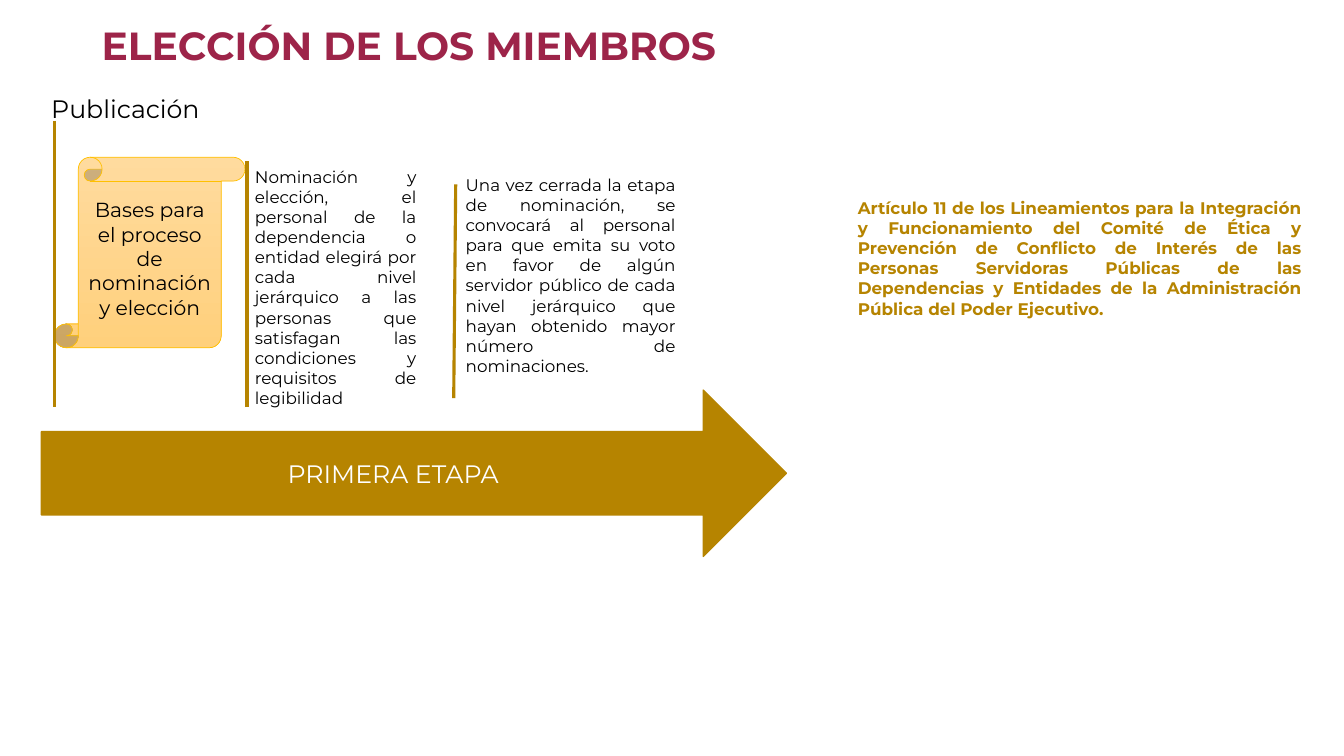
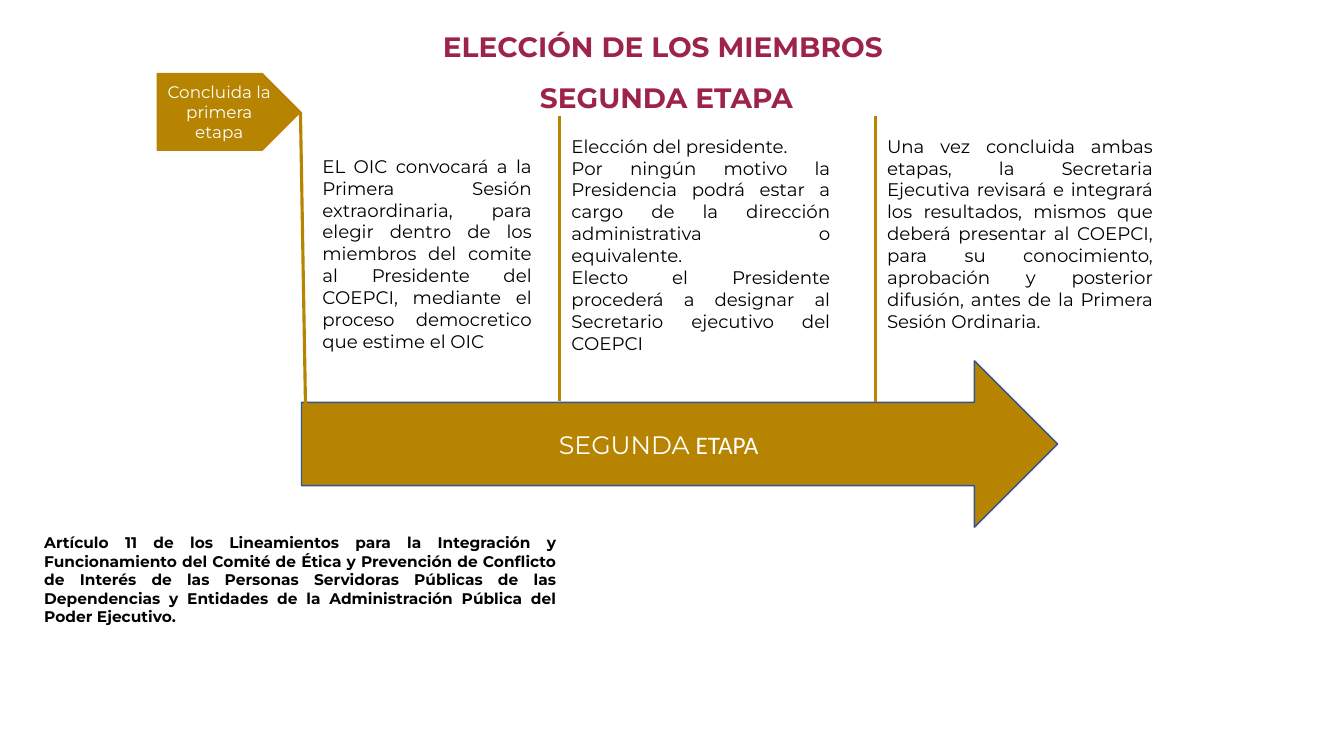
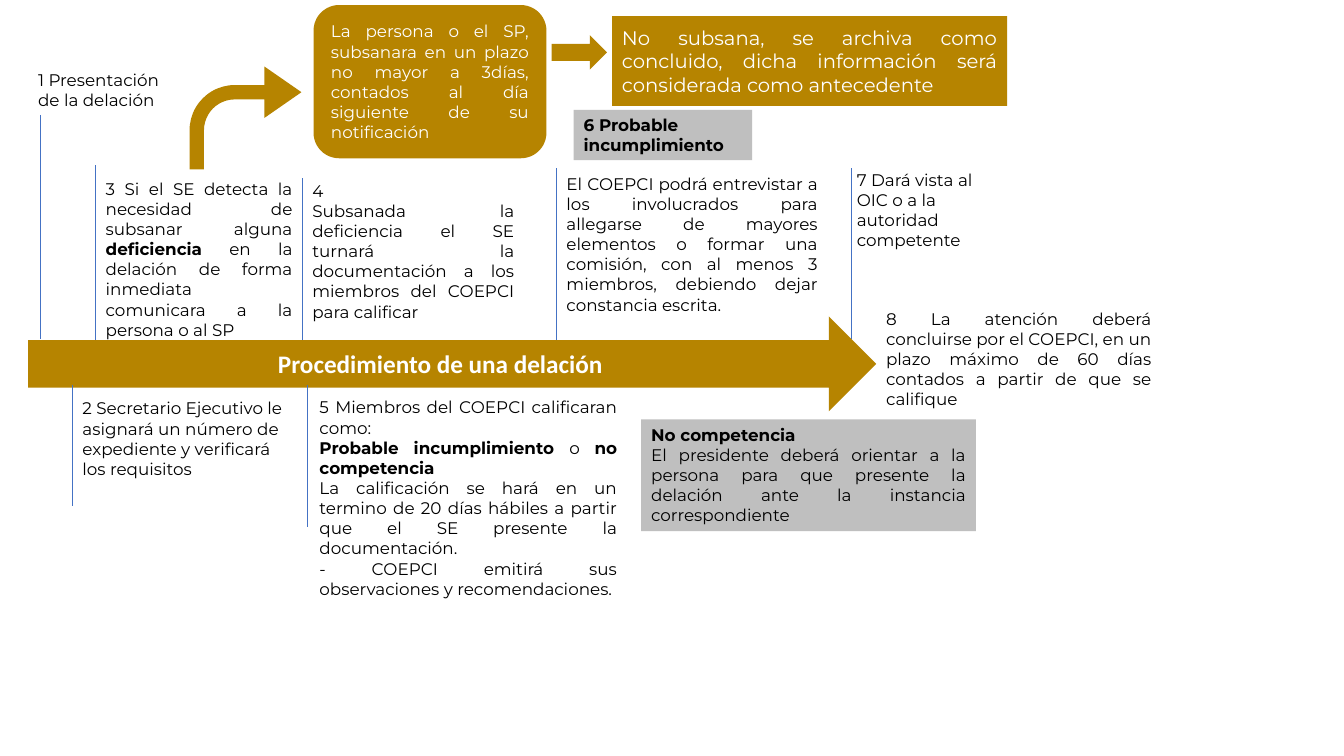
from dataclasses import dataclass

from pptx import Presentation
from pptx.dml.color import RGBColor
from pptx.enum.shapes import MSO_CONNECTOR as Line, MSO_SHAPE as Geo
from pptx.enum.text import MSO_ANCHOR as Anchor, MSO_AUTO_SIZE as Fit, PP_ALIGN as Al
from pptx.oxml.ns import qn
from pptx.util import Emu, Pt

PX = 9144  # 100 px to the inch
TITLE_ONLY, BLANK = 5, 6


@dataclass(frozen=True)
class Theme:
    font: str = "Montserrat"
    plain_font: str = "Calibri"
    wine: str = "9D2449"
    gold: str = "B68400"
    navy: str = "325491"
    blue: str = "4472C4"
    gray: str = "BFBFBF"
    amber: str = "FFC000"
    parchment: tuple = ("FFDB9E", "FFD07C")
    black: str = "000000"
    white: str = "FFFFFF"
    title: int = 28
    subtitle: int = 20
    banner: int = 18
    scroll: float = 14.5
    callout: int = 14
    large: int = 13
    body: int = 12
    note: int = 11


T = Theme()
rgb = RGBColor.from_string


class Deck:
    def __init__(self):
        self.prs = Presentation()
        self.prs.slide_width, self.prs.slide_height = Emu(1333 * PX), Emu(750 * PX)
        self.s = None

    def slide(self, layout):
        self.s = self.prs.slides.add_slide(self.prs.slide_layouts[layout])

    def fill_text(self, sp, text, size, color, align, bold=False, font=T.font,
                  anchor=Anchor.TOP, spacing=None):
        """One paragraph per line of text; ** switches bold on and off."""
        tf = sp.text_frame
        tf.word_wrap, tf.auto_size, tf.vertical_anchor = True, Fit.NONE, anchor
        for i, line in enumerate(text.split("\n")):
            p = tf.paragraphs[0] if i == 0 else tf.add_paragraph()
            p.alignment, p.line_spacing = align, spacing
            for j, part in enumerate(line.split("**")):
                if part:
                    r = p.add_run()
                    r.text = part
                    r.font.name, r.font.size = font, Pt(size)
                    r.font.bold = bold or j % 2 == 1
                    r.font.color.rgb = rgb(color)

    def heading(self, sp, text, size):
        self.fill_text(sp, text, size, T.wine, Al.CENTER, bold=True, spacing=0.9)

    def title(self, box, text, size):
        sp = self.s.shapes.title
        sp.left, sp.top, sp.width, sp.height = (Emu(v * PX) for v in box)
        self.heading(sp, text, size)

    def subtitle(self, box, text):
        self.heading(self.textbox(box), text, T.subtitle)

    def textbox(self, box):
        return self.s.shapes.add_textbox(*(Emu(v * PX) for v in box))

    def text(self, box, text, size=T.body, color=T.black, align=Al.JUSTIFY, bold=False):
        self.fill_text(self.textbox(box), text, size, color, align, bold)

    def shape(self, geo, box, text="", fill=T.gold, line=None, width=1, size=T.body,
              color=T.white, align=Al.CENTER, anchor=Anchor.MIDDLE, **style):
        sp = self.s.shapes.add_shape(geo, *(Emu(v * PX) for v in box))
        sp.shadow.inherit = False
        if isinstance(fill, tuple):
            sp.fill.gradient()
            sp.fill.gradient_angle = 270
            for stop, c in zip(sp.fill.gradient_stops, fill):
                stop.color.rgb = rgb(c)
        else:
            sp.fill.solid()
            sp.fill.fore_color.rgb = rgb(fill)
        if line:
            sp.line.color.rgb, sp.line.width = rgb(line), Pt(width)
        else:
            sp.line.fill.background()
        if text:
            self.fill_text(sp, text, size, color, align, anchor=anchor, **style)
        return sp

    def rule(self, x1, y1, x2, y2, color=T.gold, width=2.25):
        ln = self.s.shapes.add_connector(
            Line.STRAIGHT, *(Emu(v * PX) for v in (x1, y1, x2, y2)))
        ln.line.color.rgb, ln.line.width = rgb(color), Pt(width)
        sp_pr = ln._element.spPr
        sp_pr.append(sp_pr.makeelement(qn("a:effectLst"), {}))


HEADING = "ELECCIÓN DE LOS MIEMBROS"
ARTICLE = ("Artículo 11 de los Lineamientos para la Integración y Funcionamiento del Comité "
           "de Ética y Prevención de Conflicto de Interés de las Personas Servidoras Públicas "
           "de las Dependencias y Entidades de la Administración Pública del Poder Ejecutivo.")


def first_stage(d):
    d.slide(TITLE_ONLY)
    d.title((59, 21, 693, 54), HEADING, T.title)
    # Call and stage arrow
    d.shape(Geo.VERTICAL_SCROLL, (54, 156, 189, 189),
            "Bases para el proceso de nominación y elección", T.parchment, T.amber, 0.5,
            T.scroll, T.black)
    d.shape(Geo.RIGHT_ARROW, (41, 387, 739, 165), "PRIMERA ETAPA", line=T.gold, size=T.banner)
    # Steps
    for ends in ((54, 120, 54, 404), (245, 404, 245, 160), (452, 183, 450, 395)):
        d.rule(*ends)
    d.text((41, 88, 180, 40), "Publicación", T.banner, align=Al.LEFT)
    d.text((243, 160, 180, 252),
           "Nominación y elección, el personal de la dependencia o entidad elegirá por cada "
           "nivel jerárquico a las personas que satisfagan las condiciones y requisitos de "
           "legibilidad")
    d.text((452, 168, 228, 212),
           "Una vez cerrada la etapa de nominación, se convocará al personal para que emita su "
           "voto en favor de algún servidor público de cada nivel jerárquico que hayan obtenido "
           "mayor número de nominaciones.")
    # Legal basis
    d.text((841, 191, 460, 131), ARTICLE, color=T.gold, bold=True)


def second_stage(d):
    d.slide(TITLE_ONLY)
    d.title((384, 28, 547, 46), HEADING, T.subtitle)
    d.subtitle((515, 79, 292, 46), "SEGUNDA ETAPA")
    # Stage arrow, its last word in the plain font
    sp = d.shape(Geo.RIGHT_ARROW, (299, 358, 750, 165), "SEGUNDA** ETAPA",
                 line=T.navy, size=T.banner)
    r = sp.text_frame.paragraphs[0].runs[1]
    r.font.name, r.font.bold = T.plain_font, False
    # Steps
    for ends in ((298, 111, 303, 402), (555, 115, 555, 398), (868, 115, 868, 399)):
        d.rule(*ends)
    d.shape(Geo.PENTAGON, (156, 73, 142, 76), "Concluida la primera etapa", line=T.gold)
    d.text((310, 149, 227, 229),
           "EL OIC convocará a la Primera Sesión extraordinaria, para elegir dentro de los "
           "miembros del comite al Presidente del COEPCI, mediante el proceso democretico que "
           "estime el OIC", T.large)
    d.text((557, 129, 276, 251),
           "Elección del presidente.\n"
           "Por ningún motivo la Presidencia podrá estar a cargo de la dirección administrativa "
           "o equivalente.\n"
           "Electo el Presidente procederá a designar al Secretario ejecutivo del COEPCI", T.large)
    d.text((870, 129, 283, 251),
           "Una vez concluida ambas etapas, la Secretaria Ejecutiva revisará e integrará los "
           "resultados, mismos que deberá presentar al COEPCI, para su conocimiento, aprobación "
           "y posterior difusión, antes de la Primera Sesión Ordinaria.", T.large)
    # Legal basis
    d.text((34, 524, 528, 103), ARTICLE, T.note, bold=True)


def complaint_procedure(d):
    d.slide(BLANK)
    # Timeline and its step markers
    d.shape(Geo.RIGHT_ARROW, (28, 314, 841, 94), "Procedimiento de una delación",
            size=T.banner, bold=True, font=T.plain_font)
    for x, top, bottom in ((40, 114, 336), (95, 164, 337), (72, 382, 502), (300, 177, 337),
                           (305, 382, 523), (552, 167, 337), (844, 167, 336)):
        d.rule(x, top, x, bottom, T.blue, 0.5)
    # Correction of deficiencies
    d.shape(Geo.ROUNDED_RECTANGLE, (311, 5, 231, 152),
            "La persona o el SP, subsanara en un plazo no mayor a 3días, contados al día "
            "siguiente de su notificación", align=Al.JUSTIFY)
    bend = d.shape(Geo.BENT_ARROW, (188, 66, 111, 102))
    for i, value in enumerate((0.14, 0.25, 0.36, 0.44)):
        bend.adjustments[i] = value
    d.shape(Geo.RECTANGLE, (607, 16, 392, 89),
            "No subsana, se archiva como concluido, dicha información será considerada como "
            "antecedente", size=T.callout, align=Al.JUSTIFY)
    d.shape(Geo.RIGHT_ARROW, (547, 35, 55, 34))
    # Outcomes
    for box, align, text in (
            ((636, 416, 332, 111), Al.JUSTIFY,
             "**No competencia**\nEl presidente deberá orientar a la persona para que presente "
             "la delación ante la instancia correspondiente"),
            ((569, 109, 177, 50), Al.LEFT, "**6 Probable incumplimiento**")):
        d.shape(Geo.RECTANGLE, box, text, T.gray, color=T.black, align=align, anchor=Anchor.TOP)
    # Steps
    for box, align, text in (
            ((28, 64, 150, 50), Al.LEFT, "1 Presentación de la delación"),
            ((72, 390, 220, 91), Al.LEFT,
             "2 Secretario Ejecutivo le asignará un número de expediente y verificará los "
             "requisitos"),
            ((95, 172, 205, 172), Al.JUSTIFY,
             "3 Si el SE detecta la necesidad de subsanar alguna **deficiencia** en la delación "
             "de forma inmediata comunicara a la persona o al SP"),
            ((300, 174, 220, 151), Al.JUSTIFY,
             "4\nSubsanada la deficiencia el SE turnará la documentación a los miembros del "
             "COEPCI para calificar"),
            ((307, 389, 315, 232), Al.JUSTIFY,
             "5 Miembros del COEPCI calificaran como:\n"
             "**Probable incumplimiento **o **no competencia**\n"
             "La calificación se hará en un termino de 20 días hábiles a partir que el SE "
             "presente la documentación.\n"
             "- COEPCI emitirá sus observaciones y recomendaciones."),
            ((552, 167, 269, 192), Al.JUSTIFY,
             "El COEPCI podrá entrevistar a los involucrados para allegarse de mayores "
             "elementos o formar una comisión, con al menos 3 miembros, debiendo dejar "
             "constancia escrita."),
            ((840, 163, 137, 91), Al.LEFT, "7 Dará vista al OIC o a la autoridad competente"),
            ((869, 301, 283, 111), Al.JUSTIFY,
             "8 La atención deberá concluirse por el COEPCI, en un plazo máximo de 60 días "
             "contados a partir de que se califique")):
        d.text(box, text, align=align)


def main():
    d = Deck()
    for build in (first_stage, second_stage, complaint_procedure):
        build(d)
    d.prs.save("out.pptx")


if __name__ == "__main__":
    main()
